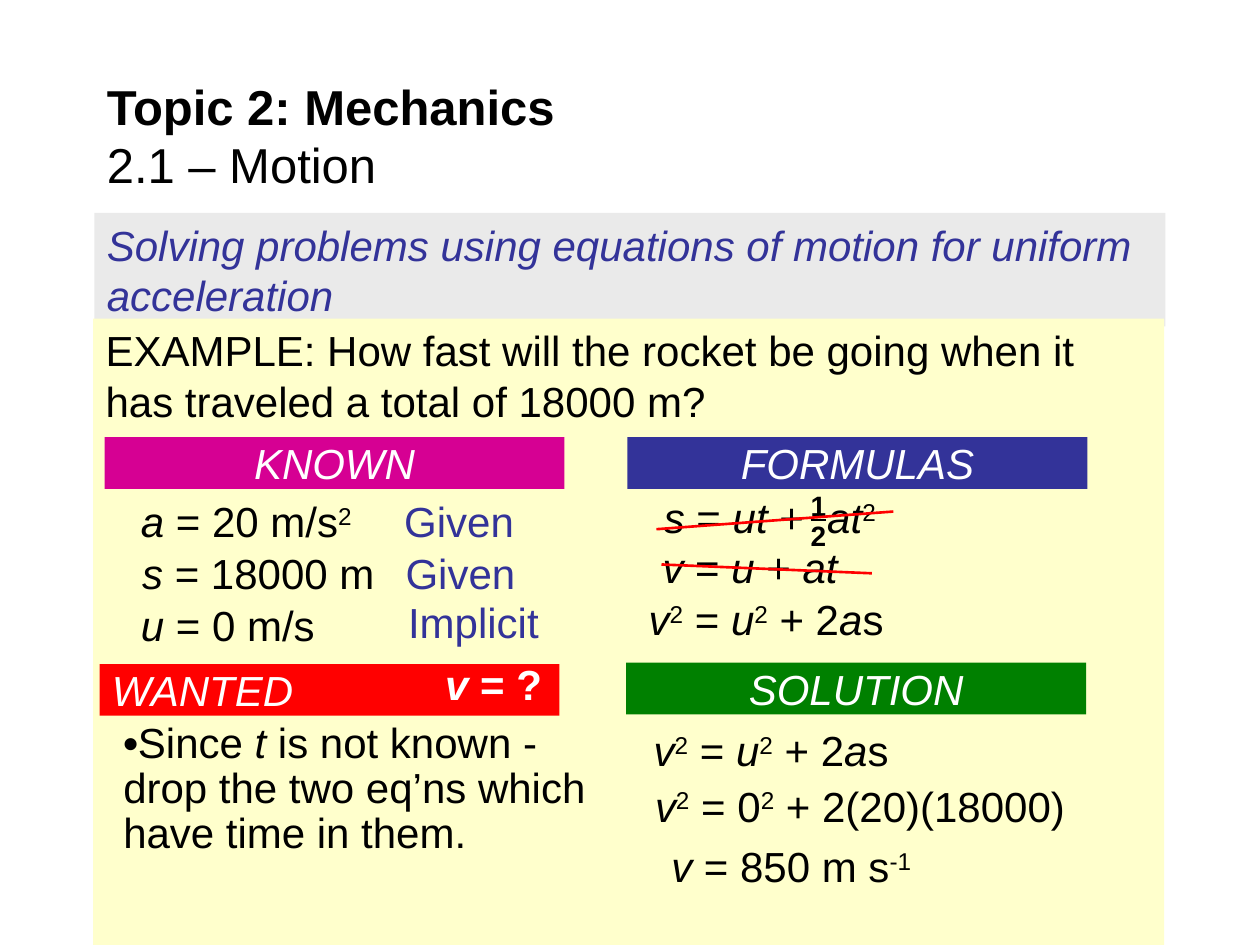
import pptx
import pptx.util
import pptx.dml.color
import pptx.enum.shapes
import pptx.enum.text
import pptx.oxml.ns
from lxml import etree

THEME = {
    "font": "Arial", "heading": 28, "body": 24, "fraction": 16, "strike": 1.5,
    "black": "000000", "white": "FFFFFF", "navy": "333399", "grey": "EAEAEA",
    "cream": "FFFFCC", "magenta": "D60093", "red": "FF0000", "green": "008000",
}
# Run styles: one letter per format; "w" widens the run's spacing
STYLES = {"i": {"italic": True}, "b": {"bold": True}, "u": {"underline": True}}

# ---- Content: runs are (text, style letters), "^" is superscript ----
TITLE = [("Topic 2: Mechanics", "b"), ("\n", ""), ("2.1 – Motion", "")]
SUBTITLE = [("Solving problems using equations of motion for uniform acceleration", "i")]
EXAMPLE = [("EXAMPLE: How fast will the rocket be going when it "
            "has traveled a total of 18000 m?", "")]
ENERGY_FREE = [("v", "i"), ("2", "^"), (" = ", ""), ("u", "i"), ("2", "^"),
               (" + 2", ""), ("a", "i"), ("s", "")]
DISTANCE = [("s ", "i"), ("= ", ""), ("ut", "i"), (" +", ""), (" ", "w"),
            ("at", "i"), ("2", "^")]
SINCE = [("•", "b"), ("Since ", ""), ("t", "i"),
         (" is not known - drop the two eq’ns which have time in them.", "")]

# Panels: header, fill, align, left, top, then lines as
# (dx, dy, width, height, colour, align, runs), measured from the panel's corner
PANELS = [
    ("KNOWN", "magenta", "CENTER", 0.83, 3.47, [
        (0.19, 0.46, 2.31, 0.41, "black", "LEFT", [("a", "i"), (" = 20 m/s", ""), ("2", "^")]),
        (0.20, 0.87, 3.19, 0.41, "black", "LEFT", [("s", "i"), (" = 18000 m", "")]),
        (0.19, 1.28, 1.89, 0.41, "black", "LEFT", [("u", "i"), (" = 0 m/s", "")]),
        (2.28, 0.46, 1.31, 0.41, "navy", "LEFT", [("Given", "")]),
        (2.29, 0.87, 1.31, 0.41, "navy", "LEFT", [("Given", "")]),
        (2.31, 1.26, 1.83, 0.41, "navy", "LEFT", [("Implicit", "")]),
    ]),
    ("WANTED", "red", "LEFT", 0.79, 5.27, [
        (2.42, -0.05, 1.19, 0.41, "white", "RIGHT", [("v", "bi"), (" = ?", "b")]),
        (0.09, 0.41, 3.98, 0.81, "black", "LEFT", SINCE),
    ]),
    ("FORMULAS", "navy", "CENTER", 4.98, 3.47, [
        (0.19, 0.43, 3.44, 0.35, "black", "LEFT", DISTANCE),
        (0.18, 0.82, 2.12, 0.39, "black", "LEFT",
         [("v", "i"), (" = ", ""), ("u ", "i"), ("+ ", ""), ("at", "i")]),
        (0.07, 1.24, 3.24, 0.43, "black", "LEFT", ENERGY_FREE),
    ]),
    ("SOLUTION", "green", "CENTER", 4.97, 5.26, [
        (0.12, 0.49, 3.24, 0.43, "black", "LEFT", ENERGY_FREE),
        (0.13, 0.93, 3.91, 0.43, "black", "LEFT",
         [("v", "i"), ("2", "^"), (" = 0", ""), ("2", "^"), (" + 2(20)(18000)", "")]),
        (0.26, 1.41, 3.91, 0.43, "black", "LEFT",
         [("v", "i"), (" = 850 m s", ""), ("-1", "^")]),
    ]),
]
HEADER_SIZE = (3.65, 0.41)
HALF = [[("1", "bu")], [("2", "b")]]
STRIKES = [((5.21, 4.20), (7.09, 4.06)), ((5.25, 4.48), (6.92, 4.55))]


def colour(name):
    return pptx.dml.color.RGBColor.from_string(THEME[name])


def inches(values):
    return [pptx.util.Inches(value) for value in values]


def write(paragraph, runs, ink, size, align, leading, before):
    paragraph.alignment = getattr(pptx.enum.text.PP_ALIGN, align)
    if leading:
        paragraph.line_spacing = leading
    if before:  # space before, as a share of the line
        gap = etree.SubElement(paragraph._p.get_or_add_pPr(), pptx.oxml.ns.qn("a:spcBef"))
        etree.SubElement(gap, pptx.oxml.ns.qn("a:spcPct")).set("val", str(before * 1000))
    for text, style in runs:
        if text == "\n":
            paragraph.add_line_break()
            continue
        run = paragraph.add_run()
        run.text = text
        formats = {"name": THEME["font"], "size": pptx.util.Pt(THEME[size]),
                   "bold": False, "italic": False}
        for letter in style:
            formats.update(STYLES.get(letter, {}))
        for key, value in formats.items():
            setattr(run.font, key, value)
        run.font.color.rgb = colour(ink)
        if "^" in style:
            run.font._element.set("baseline", "30000")
        if "w" in style:
            run.font._element.set("spc", "667")


def block(slide, at, paragraphs, ink="black", size="body", align="LEFT",
          fill=None, leading=0.9, before=20, anchor="TOP"):
    if fill:
        shape = slide.shapes.add_shape(pptx.enum.shapes.MSO_SHAPE.RECTANGLE, *inches(at))
        shape.shadow.inherit = False
        shape.fill.solid()
        shape.fill.fore_color.rgb = colour(fill)
        shape.line.fill.background()
    else:
        shape = slide.shapes.add_textbox(*inches(at))
    frame = shape.text_frame
    frame.word_wrap = True
    frame.vertical_anchor = getattr(pptx.enum.text.MSO_ANCHOR, anchor)
    for index, runs in enumerate(paragraphs):
        paragraph = frame.add_paragraph() if index else frame.paragraphs[0]
        write(paragraph, runs, ink, size, align, leading, before)


def strike_out(slide, start, end):
    line = slide.shapes.add_connector(
        pptx.enum.shapes.MSO_CONNECTOR.STRAIGHT, *inches(start + end))
    line.line.color.rgb = colour("red")
    line.line.width = pptx.util.Pt(THEME["strike"])
    etree.SubElement(line._element.spPr, pptx.oxml.ns.qn("a:effectLst"))


def main():
    deck = pptx.Presentation()
    deck.slide_width, deck.slide_height = inches((10, 7.5))
    slide = deck.slides.add_slide(deck.slide_layouts[6])

    # Heading, section band and example background
    block(slide, (0.75, 1.69, 8.5, 0.9), [SUBTITLE], "navy", fill="grey", leading=None)
    block(slide, (0.75, 0.58, 8.5, 0.98), [TITLE], size="heading",
          leading=None, before=0, anchor="MIDDLE")
    block(slide, (0.74, 2.53, 8.5, 4.97), [EXAMPLE], fill="cream", leading=None)

    # Four panels, each a coloured header with its lines
    for header, fill, header_align, left, top, lines in PANELS:
        block(slide, (left, top, *HEADER_SIZE), [[(header, "i")]], "white",
              align=header_align, fill=fill)
        for dx, dy, width, height, ink, align, runs in lines:
            block(slide, (left + dx, top + dy, width, height), [runs], ink, align=align)

    # Stacked one half, and the formulas struck out
    block(slide, (6.32, 3.86, 0.35, 0.46), HALF, size="fraction", align="CENTER", before=0)
    for start, end in STRIKES:
        strike_out(slide, start, end)

    deck.save("out.pptx")


if __name__ == "__main__":
    main()
